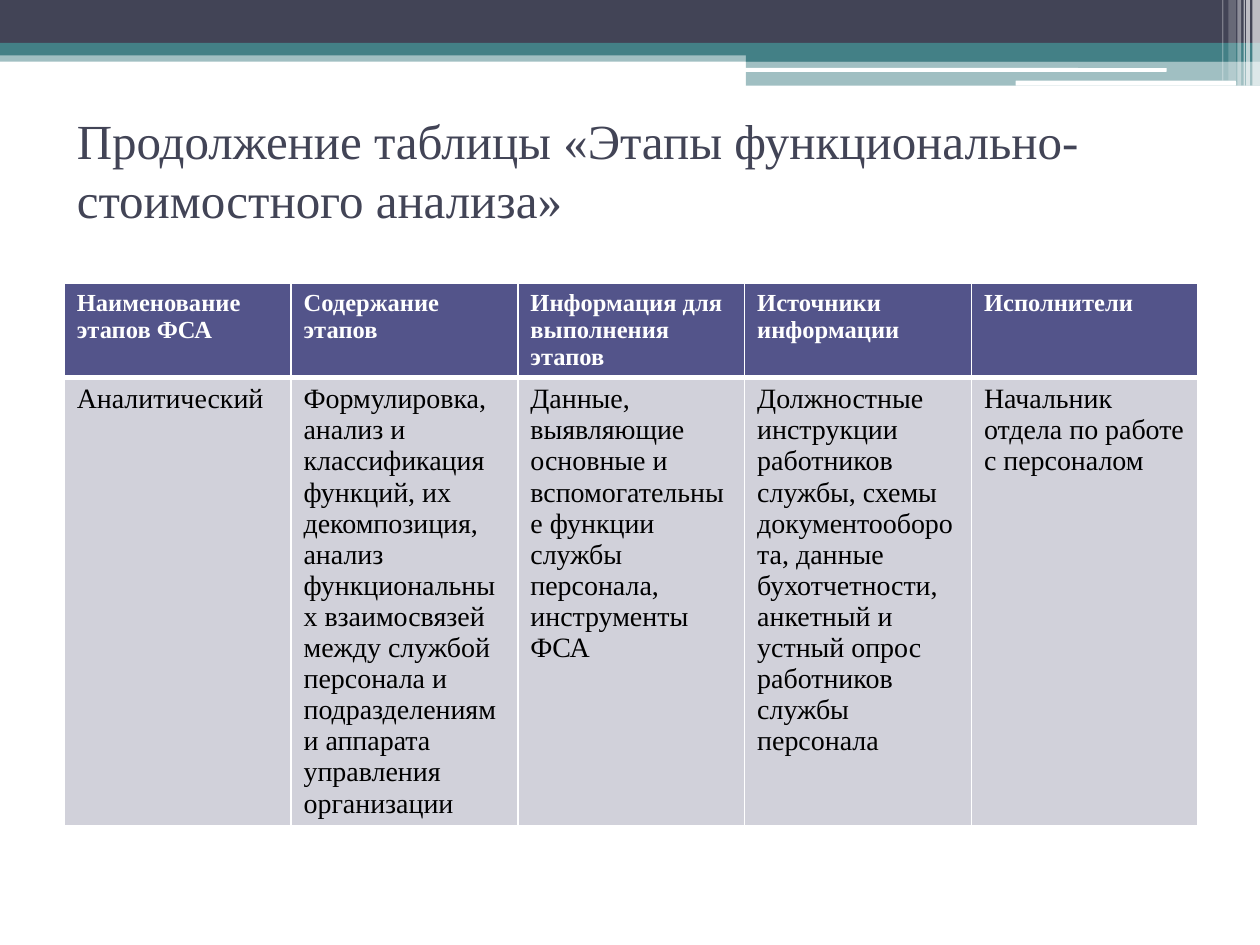
from lxml import etree
from pptx import Presentation
from pptx import util as u
from pptx.dml.color import RGBColor
from pptx.enum import shapes, text
from pptx.oxml import ns

FONT = "Times New Roman"
COLORS = {
    "navy": "424456",
    "teal": "438086",
    "white": "FFFFFF",
    "black": "000000",
    "header": "53548A",
    "body": "D1D1DA",
}

BANDS = [
    (0, 0.4, 10, 0.09, "teal", 50),
    (0, 0, 10, 0.34, "navy", 100),
    (0, 0.34, 10, 0.1, "teal", 100),
    (5.92, 0.39, 4.08, 0.1, "teal", 100),
    (5.92, 0.48, 4.08, 0.2, "teal", 50),
]
ROUNDED_LINES = [
    (5.91, 0.54, 3.35, 0.03, "white", 100),
    (8.06, 0.64, 1.75, 0.04, "white", 100),
]
STRIPES = [
    (9.94, 0.06, 0.68, 65),
    (9.89, 0.03, 0.68, 65),
    (9.87, 0.01, 0.68, 60),
    (9.82, 0.03, 0.68, 40),
    (9.75, 0.06, 0.64, 20),
    (9.7, 0.01, 0.64, 30),
]

TITLE = "Продолжение таблицы «Этапы функционально-стоимостного анализа»"
STAGES = [
    [
        "Наименование этапов ФСА",
        "Содержание этапов",
        "Информация для выполнения этапов",
        "Источники информации",
        "Исполнители",
    ],
    [
        "Аналитический",
        "Формулировка, анализ и классификация функций, их декомпозиция, "
        "анализ функциональных взаимосвязей между службой персонала и "
        "подразделениями аппарата управления организации",
        "Данные, выявляющие основные и вспомогательные функции службы "
        "персонала, инструменты ФСА",
        "Должностные инструкции работников службы, схемы документооборота, "
        "данные бухотчетности, анкетный и устный опрос работников службы "
        "персонала",
        "Начальник отдела по работе с персоналом",
    ],
]
ROW_HEIGHTS = [0.74, 3.55]


def rgb(color):
    return RGBColor.from_string(COLORS[color])


def format_runs(frame, size, color, bold=False):
    for paragraph in frame.paragraphs:
        for run in paragraph.runs:
            run.font.name = FONT
            run.font.size = u.Pt(size)
            run.font.bold = bold
            run.font.color.rgb = rgb(color)


def add_band(slide, kind, left, top, width, height, color, opacity):
    band = slide.shapes.add_shape(kind, *map(u.Inches, (left, top, width, height)))
    band.shadow.inherit = False
    band.line.fill.background()
    band.fill.solid()
    band.fill.fore_color.rgb = rgb(color)
    if opacity < 100:
        fill_color = band.fill._xPr.find(".//" + ns.qn("a:srgbClr"))
        etree.SubElement(fill_color, ns.qn("a:alpha"), val=str(opacity * 1000))


def add_header_decoration(slide):
    for band in BANDS:
        add_band(slide, shapes.MSO_SHAPE.RECTANGLE, *band)
    for line in ROUNDED_LINES:
        add_band(slide, shapes.MSO_SHAPE.ROUNDED_RECTANGLE, *line)
    for left, width, height, opacity in STRIPES:
        add_band(slide, shapes.MSO_SHAPE.RECTANGLE, left, 0, width, height, "white", opacity)


def place_title(slide, left, top, width, height):
    title = slide.shapes.title
    title.left, title.top, title.width, title.height = map(u.Inches, (left, top, width, height))
    frame = title.text_frame
    frame.text = TITLE
    frame.word_wrap = True
    frame.auto_size = text.MSO_AUTO_SIZE.NONE
    frame.vertical_anchor = text.MSO_ANCHOR.MIDDLE
    frame.paragraphs[0].alignment = text.PP_ALIGN.LEFT
    format_runs(frame, 28, "navy")


def set_borders(cell, widths):
    properties = cell._tc.get_or_add_tcPr()
    for side, width in widths.items():
        border = etree.SubElement(properties, ns.qn(f"a:ln{side}"), w=str(u.Pt(width)))
        fill = etree.SubElement(border, ns.qn("a:solidFill"))
        etree.SubElement(fill, ns.qn("a:srgbClr"), val=COLORS["white"])


def add_stages_table(slide, left, top, width):
    box = map(u.Inches, (left, top, width, sum(ROW_HEIGHTS)))
    table = slide.shapes.add_table(len(STAGES), len(STAGES[0]), *box).table
    for column in table.columns:
        column.width = u.Inches(width / len(STAGES[0]))
    for r, (row, height) in enumerate(zip(STAGES, ROW_HEIGHTS)):
        table.rows[r].height = u.Inches(height)
        is_header = r == 0
        for c, wording in enumerate(row):
            cell = table.cell(r, c)
            cell.text_frame.text = wording
            if is_header:
                format_runs(cell.text_frame, 14, "white", bold=True)
                set_borders(cell, {"L": 1, "R": 1, "T": 1, "B": 3})
            else:
                format_runs(cell.text_frame, 16, "black")
                set_borders(cell, {"L": 1, "R": 1, "T": 3, "B": 1})
            cell.fill.solid()
            cell.fill.fore_color.rgb = rgb("header" if is_header else "body")


def main():
    deck = Presentation()
    deck.slide_width, deck.slide_height = u.Inches(10), u.Inches(7.5)
    slide = deck.slides.add_slide(deck.slide_layouts[5])
    add_header_decoration(slide)
    place_title(slide, 0.51, 0.76, 9, 1.17)
    add_stages_table(slide, 0.51, 2.25, 9)
    deck.save("out.pptx")


if __name__ == "__main__":
    main()
